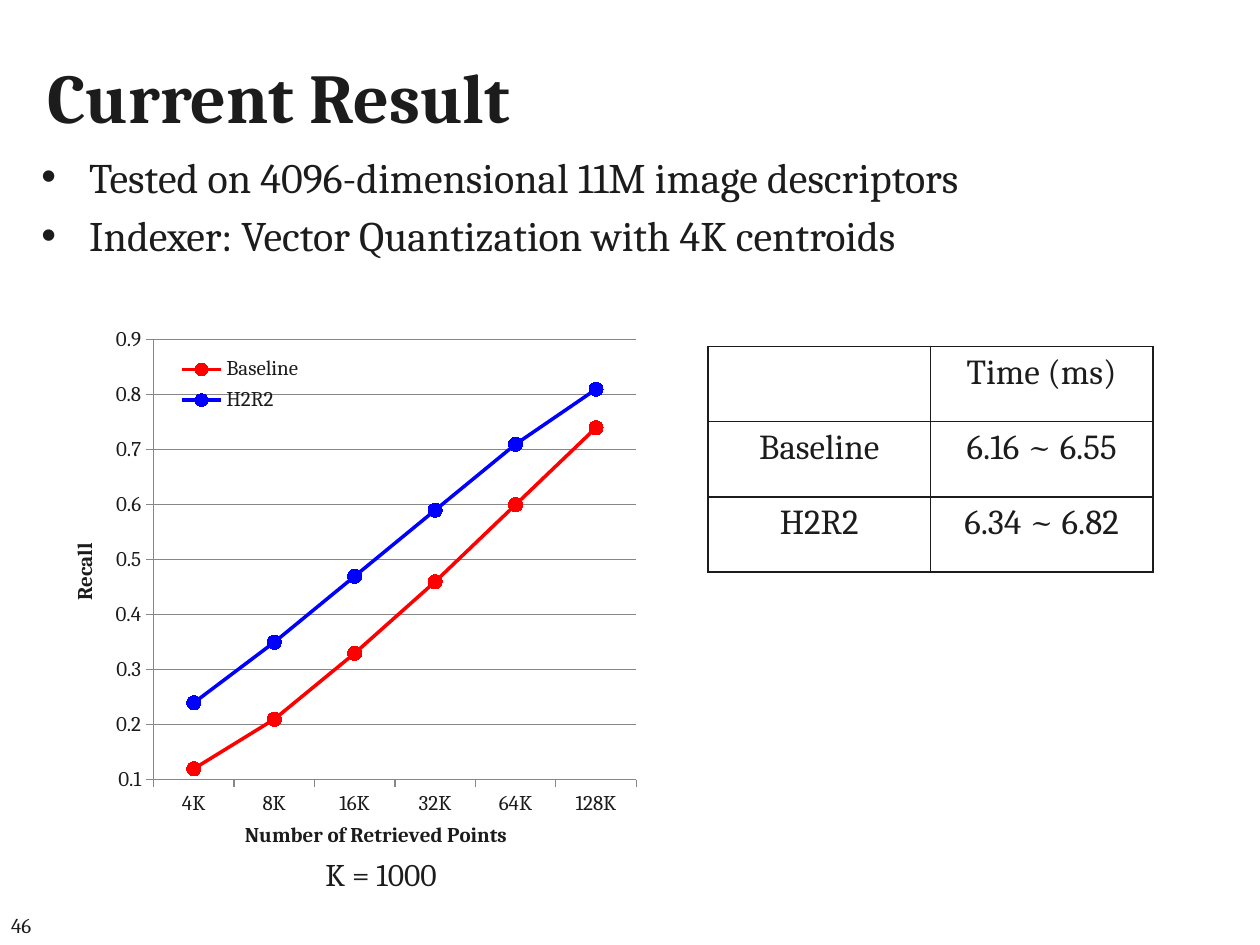
import pptx
import pptx.chart.data
import pptx.dml.color
import pptx.enum.chart
import pptx.enum.text
import pptx.oxml
import pptx.oxml.ns
import pptx.util
from pptx.util import Inches

ALIGN = pptx.enum.text.PP_ALIGN
ANCHOR = pptx.enum.text.MSO_ANCHOR
NAMESPACES = pptx.oxml.ns.nsdecls("a", "c")


def color(value):
    return pptx.dml.color.RGBColor.from_string(value)


def manual_layout(x, y, width, height, inner=False):
    """Return a chart layout in fractions of the chart area."""
    target = '<c:layoutTarget val="inner"/>' if inner else ""
    return pptx.oxml.parse_xml(
        f'<c:layout {NAMESPACES}><c:manualLayout>{target}'
        '<c:xMode val="edge"/><c:yMode val="edge"/>'
        f'<c:x val="{x}"/><c:y val="{y}"/><c:w val="{width}"/><c:h val="{height}"/>'
        '</c:manualLayout></c:layout>')


class SlideBuilder:
    font = "Cambria"
    ink = "1C1C1C"
    grid = "878787"

    def __init__(self, slide):
        self.slide = slide

    def style_font(self, font, size, bold=False):
        font.name = self.font
        font.size = pptx.util.Pt(size)
        font.bold = bold
        font.color.rgb = color(self.ink)

    def text(self, place, lines, size, bold=False, align=ALIGN.LEFT,
             anchor=ANCHOR.TOP, bullets=False):
        frame = self.slide.shapes.add_textbox(*map(Inches, place)).text_frame
        frame.word_wrap = True
        frame.vertical_anchor = anchor
        frame.text = "\n".join(lines)
        for para in frame.paragraphs:
            para.alignment = align
            self.style_font(para.runs[0].font, size, bold)
            if bullets:
                self.bullet(para, size)

    def bullet(self, para, size):
        para.space_before = pptx.util.Pt(size * 0.2)
        properties = para._p.get_or_add_pPr()
        properties.set("marL", str(Inches(0.38)))
        properties.set("indent", str(Inches(-0.38)))
        for xml in (f'<a:buFont {NAMESPACES} typeface="Arial"/>',
                    f'<a:buChar {NAMESPACES} char="•"/>'):
            properties.append(pptx.oxml.parse_xml(xml))

    def table(self, place, rows, size):
        frame = self.slide.shapes.add_table(len(rows), len(rows[0]), *map(Inches, place))
        table = frame.table
        table.first_row = table.horz_banding = False
        for row, values in enumerate(rows):
            for column, value in enumerate(values):
                cell = table.cell(row, column)
                cell.text = value
                para = cell.text_frame.paragraphs[0]
                para.alignment = ALIGN.CENTER
                self.style_font(para.font, size)
                for span in para.runs:
                    self.style_font(span.font, size)
                self.cell_borders(cell)
                cell.fill.background()

    def cell_borders(self, cell):
        properties = cell._tc.get_or_add_tcPr()
        for side in ("lnL", "lnR", "lnT", "lnB"):
            properties.append(pptx.oxml.parse_xml(
                f'<a:{side} {NAMESPACES} w="{pptx.util.Pt(1)}"><a:solidFill>'
                f'<a:srgbClr val="{self.ink}"/></a:solidFill></a:{side}>'))

    def line_chart(self, place, categories, series, axis_titles, size):
        """Add a marker chart; series maps a name to its values and colour."""
        data = pptx.chart.data.CategoryChartData()
        data.categories = categories
        for name, (values, _) in series.items():
            data.add_series(name, values)
        kind = pptx.enum.chart.XL_CHART_TYPE.LINE_MARKERS
        chart = self.slide.shapes.add_chart(kind, *map(Inches, place), data).chart
        self.style_font(chart.font, size)
        chart.has_title = False
        plot = chart.plots[0]
        plot.vary_by_categories = False
        for line, (_, shade) in zip(plot.series, series.values()):
            self.style_series(line, shade)
        for axis, title in zip((chart.category_axis, chart.value_axis), axis_titles):
            self.style_axis(axis, title, size)
        chart.value_axis.major_gridlines.format.line.color.rgb = color(self.grid)
        chart.has_legend = True
        chart.legend.position = pptx.enum.chart.XL_LEGEND_POSITION.RIGHT
        chart.legend.include_in_layout = False
        self.place_parts(chart)
        return chart

    def style_series(self, line, shade):
        line.smooth = False
        line.format.line.color.rgb = color(shade)
        line.format.line.width = pptx.util.Pt(2)
        marker = line.marker
        marker.style = pptx.enum.chart.XL_MARKER_STYLE.CIRCLE
        marker.size = 8
        marker.format.fill.solid()
        marker.format.fill.fore_color.rgb = color(shade)
        marker.format.line.color.rgb = color(shade)

    def style_axis(self, axis, title, size):
        axis.format.line.color.rgb = color(self.grid)
        axis.major_tick_mark = pptx.enum.chart.XL_TICK_MARK.OUTSIDE
        self.style_font(axis.tick_labels.font, size)
        frame = axis.axis_title.text_frame
        frame.text = title
        self.style_font(frame.paragraphs[0].runs[0].font, size, bold=True)

    def place_parts(self, chart):
        """Fix the plot area and set the legend inside it, at top left."""
        area = chart._chartSpace.chart.plotArea
        for old in area.findall(pptx.oxml.ns.qn("c:layout")):
            area.remove(old)
        area.insert(0, manual_layout(0.15, 0.03, 0.81, 0.83, inner=True))
        legend = chart.legend._element
        for old in legend.findall(pptx.oxml.ns.qn("c:layout")):
            legend.remove(old)
        position = legend.find(pptx.oxml.ns.qn("c:legendPos"))
        position.addnext(manual_layout(0.18, 0.05, 0.23, 0.13))


def main():
    deck = pptx.Presentation()
    deck.slide_width, deck.slide_height = Inches(10), Inches(7.5)
    page = SlideBuilder(deck.slides.add_slide(deck.slide_layouts[6]))

    page.text((0.28, 0.13, 10.16, 1.25), ["Current Result"], 40, bold=True,
              anchor=ANCHOR.MIDDLE)
    page.text((0.23, 1.15, 9.72, 5.99),
              ["Tested on 4096-dimensional 11M image descriptors",
               "Indexer: Vector Quantization with 4K centroids"], 24, bullets=True)
    page.text((-0.01, 7.14, 2.33, 0.4), ["46"], 12, anchor=ANCHOR.MIDDLE)

    recall = {
        "Baseline": ((0.12, 0.21, 0.33, 0.46, 0.6, 0.74), "FF0000"),
        "H2R2": ((0.24, 0.35, 0.47, 0.59, 0.71, 0.81), "0000FF"),
    }
    chart = page.line_chart((0.51, 2.57, 4.73, 4.21),
                            ["4K", "8K", "16K", "32K", "64K", "128K"], recall,
                            ("Number of Retrieved Points", "Recall"), 12)
    chart.value_axis.minimum_scale = 0.1
    chart.value_axis.maximum_scale = 0.9
    chart.value_axis.major_unit = 0.1

    page.table((5.62, 2.75, 3.53, 1.79),
               [("", "Time (ms)"), ("Baseline", "6.16 ~ 6.55"), ("H2R2", "6.34 ~ 6.82")], 20)
    page.text((1.61, 6.74, 2.83, 0.4), ["K = 1000"], 18, align=ALIGN.CENTER)
    deck.save("out.pptx")


if __name__ == "__main__":
    main()
